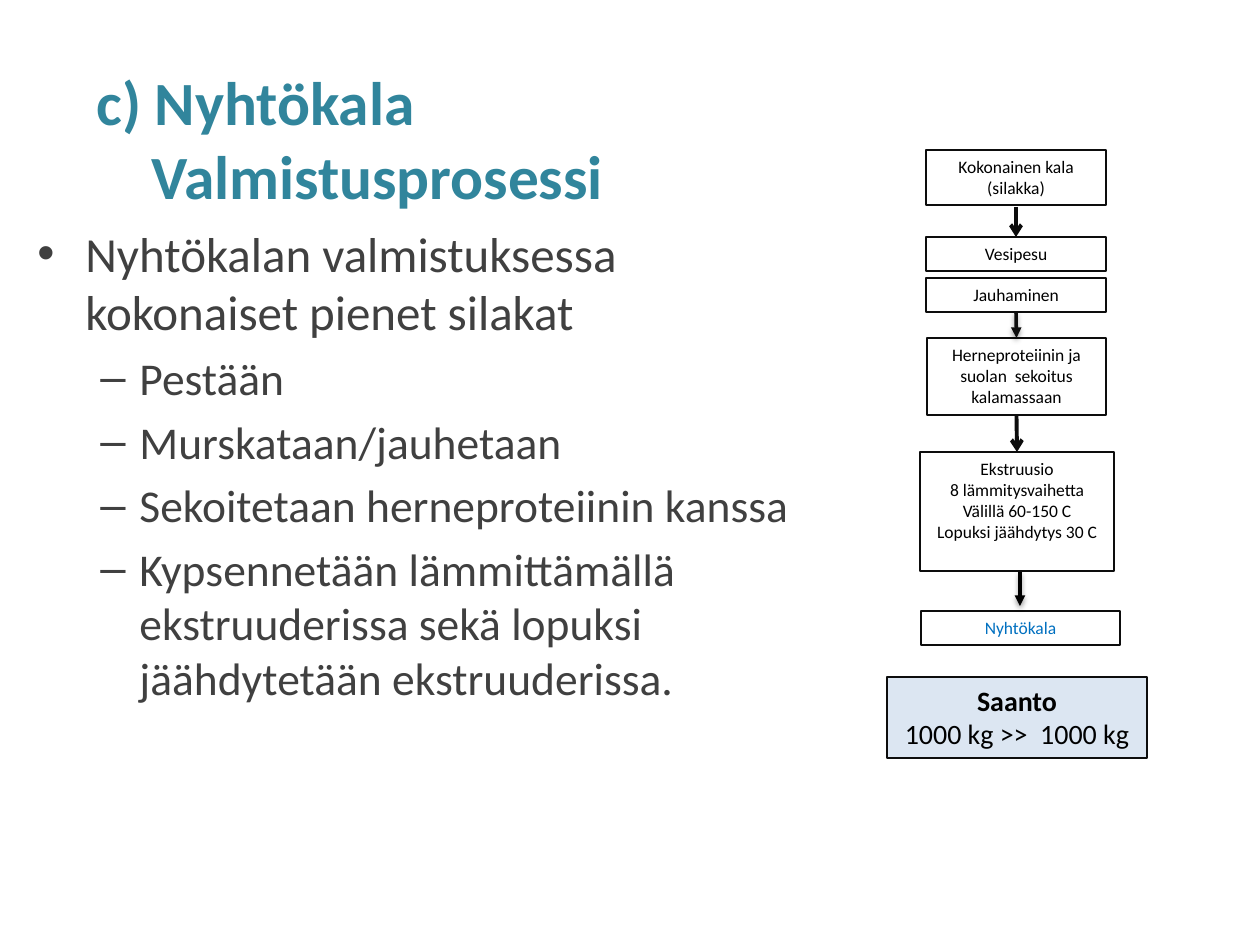
from lxml import etree
from pptx import Presentation
from pptx import util as u
from pptx.dml.color import RGBColor
from pptx.enum import shapes, text
from pptx.oxml import ns

PX = u.Inches(1) / 126
FONT = "Calibri"
INK = "0D0D0D"
BLACK = "000000"


def px(length):
    return u.Emu(round(length * PX))


def color(value):
    return RGBColor.from_string(value)


def add_xml(parent, tag, **attributes):
    return etree.SubElement(parent, ns.qn(tag), attributes)


def style(para, size, hue, bold=False):
    for span in para.runs:
        span.font.name = FONT
        span.font.size = u.Pt(size)
        span.font.bold = bold
        span.font.color.rgb = color(hue)


def set_indent(para, left, bullet=None, hang=0):
    """Hanging indent, with a bullet character if one is given."""
    properties = para._p.get_or_add_pPr()
    properties.set("marL", str(px(left)))
    properties.set("indent", str(-px(hang)))
    if bullet:
        add_xml(properties, "a:buFont", typeface="Arial")
        add_xml(properties, "a:buChar", char=bullet)


def add_text_box(page, left, top, width, height):
    box = page.shapes.add_textbox(px(left), px(top), px(width), px(height))
    box.text_frame.word_wrap = True
    return box.text_frame


def add_title(page, left, top, width, height):
    frame = add_text_box(page, left, top, width, height)
    frame.vertical_anchor = text.MSO_ANCHOR.MIDDLE
    para = frame.paragraphs[0]
    para.text = "c) Nyhtökala\vValmistusprosessi"
    set_indent(para, 55, hang=55)
    style(para, 35.1, "31859C", bold=True)


def add_bullets(page, left, top, width, height):
    frame = add_text_box(page, left, top, width, height)
    frame.text = "\n".join([
        "Nyhtökalan valmistuksessa kokonaiset pienet silakat",
        "Pestään",
        "Murskataan/jauhetaan",
        "Sekoitetaan herneproteiinin kanssa",
        "Kypsennetään lämmittämällä ekstruuderissa sekä lopuksi "
        "jäähdytetään ekstruuderissa.",
    ])
    main, *steps = frame.paragraphs
    set_indent(main, 48, "•", 48)
    style(main, 28, "404040")
    for step in steps:
        step.level = 1
        set_indent(step, 102, "–", 39)
        step.space_before = u.Pt(5.2)
        style(step, 26, "404040")


def add_box(page, left, top, width, height, words, size=10, hue=BLACK, fill=None):
    box = page.shapes.add_shape(shapes.MSO_SHAPE.RECTANGLE,
                                px(left), px(top), px(width), px(height))
    box.shadow.inherit = False
    box.line.color.rgb = color(INK)
    box.line.width = u.Pt(0.75)
    if fill:
        box.fill.solid()
        box.fill.fore_color.rgb = color(fill)
    else:
        box.fill.background()
    frame = box.text_frame
    frame.word_wrap = True
    frame.vertical_anchor = text.MSO_ANCHOR.TOP
    frame.text = words
    for para in frame.paragraphs:
        para.alignment = text.PP_ALIGN.CENTER
        style(para, size, hue)
    return box


def add_arrow(page, x, top, bottom, hue=INK, width=2.25, head="arrow", shadow=False):
    arrow = page.shapes.add_connector(shapes.MSO_CONNECTOR.STRAIGHT,
                                      px(x), px(top), px(x), px(bottom))
    arrow.line.color.rgb = color(hue)
    arrow.line.width = u.Pt(width)
    add_xml(arrow.line._get_or_add_ln(), "a:tailEnd", type=head)
    effects = add_xml(arrow._element.spPr, "a:effectLst")
    if shadow:
        outer = add_xml(effects, "a:outerShdw", blurRad=str(u.Pt(3.1)),
                        dist=str(u.Pt(1.6)), dir="5400000", rotWithShape="0")
        tint = add_xml(outer, "a:srgbClr", val=BLACK)
        add_xml(tint, "a:alpha", val="38000")
    return arrow


def add_process(page, left, top):
    """Flow chart of the production steps, from whole fish to product."""
    def step(x, y, width, height, words, **look):
        return add_box(page, left + x, top + y, width, height, words, **look)

    def arrow(x, start, end, **look):
        return add_arrow(page, left + x, top + start, top + end, **look)

    step(6, 0, 180, 55, "Kokonainen kala (silakka)")
    wash = step(6, 87, 180, 34, "Vesipesu")
    mince = step(6, 128, 180, 34, "Jauhaminen")
    mix = step(7, 188, 179, 77, "Herneproteiinin ja suolan  sekoitus kalamassaan")
    extrusion = step(0, 302, 194, 119, "Ekstruusio\n8 lämmitysvaihetta\n"
                     "Välillä 60-150 C\nLopuksi jäähdytys 30 C")
    step(1, 461, 199, 34, "Nyhtökala", hue="0070C0")

    soft = dict(width=2, head="triangle", shadow=True)
    arrow(96, 57, 87).end_connect(wash, 0)
    for start, end, look in ((mince, mix, soft), (mix, extrusion, {})):
        link = arrow(97, 162, 188, **look)
        link.begin_connect(start, 2)
        link.end_connect(end, 0)
    arrow(100, 422, 456, hue=BLACK, **soft)


def add_yield(page, left, top, width, height):
    box = add_box(page, left, top, width, height,
                  "Saanto\n1000 kg >>  1000 kg", size=16, fill="DCE6F2")
    style(box.text_frame.paragraphs[0], 16, BLACK, bold=True)


def main():
    deck = Presentation()
    deck.slide_width, deck.slide_height = px(1260), px(945)
    page = deck.slides.add_slide(deck.slide_layouts[6])
    add_bullets(page, 25, 217, 785, 602)
    add_yield(page, 887, 677, 260, 81)
    add_process(page, 920, 150)
    add_title(page, 84, 59, 1134, 158)
    deck.save("out.pptx")


if __name__ == "__main__":
    main()
